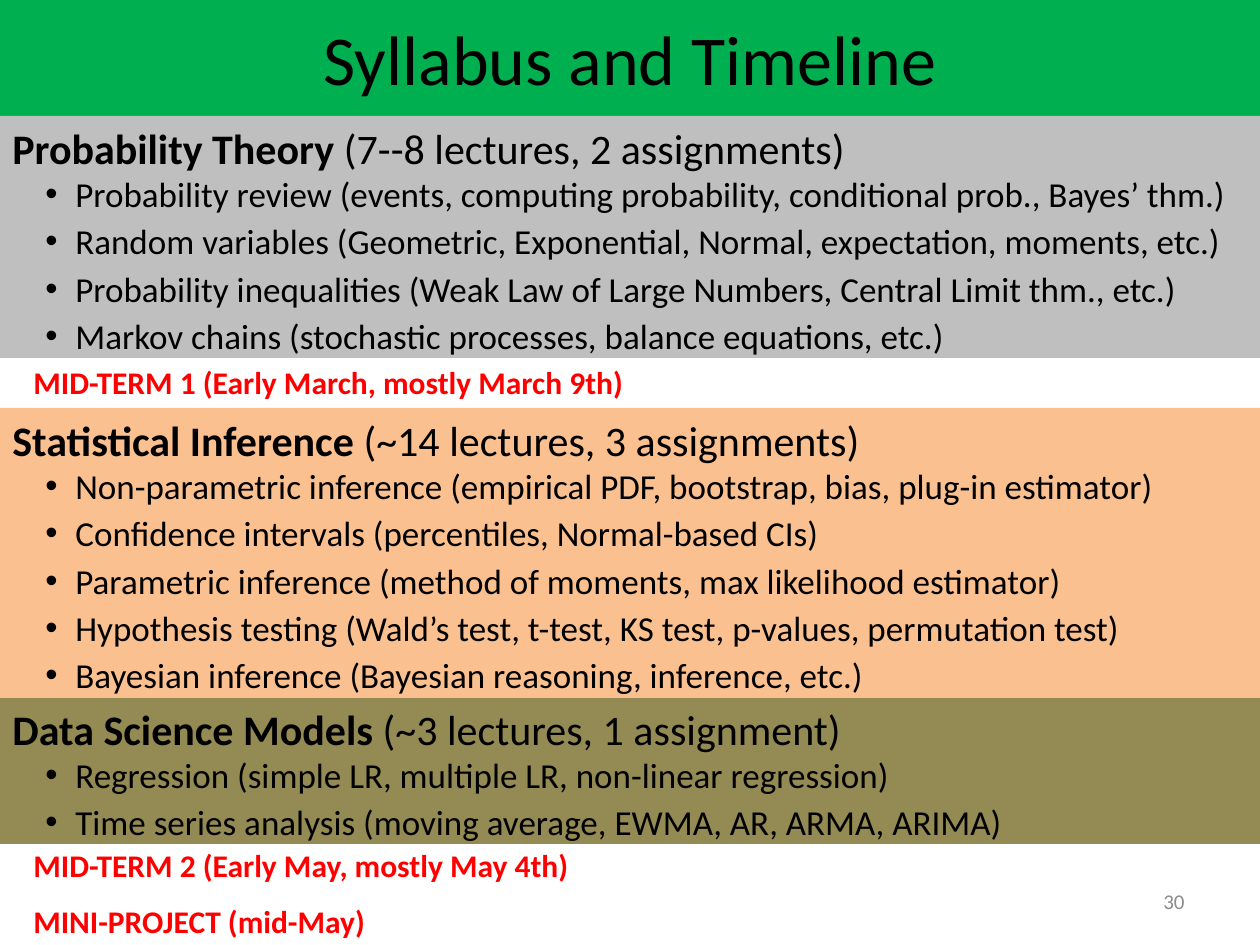
from dataclasses import dataclass

from lxml.etree import SubElement
from pptx import Presentation
from pptx.dml.color import RGBColor as Rgb
from pptx.enum.shapes import MSO_SHAPE as Shape
from pptx.enum.text import MSO_ANCHOR as Anchor, MSO_AUTO_SIZE as AutoSize, PP_ALIGN as Align
from pptx.oxml.ns import qn
from pptx.util import Emu, Pt


@dataclass(frozen=True)
class Theme:
    font: str = "Calibri"
    ink: str = "000000"
    banner: str = "00B050"
    probability: str = "BFBFBF"
    inference: str = "FAC090"
    models: str = "948A54"
    exam: str = "FF0000"
    number: str = "8C8C8C"
    title_size: int = 40
    heading_size: int = 24
    topic_size: int = 20
    exam_size: int = 18
    number_size: int = 12


theme = Theme()


def px(*lengths):
    return [Emu(round(length * 914400 / 126)) for length in lengths]


def style(font, size, color, bold=False):
    font.name = theme.font
    font.size = Pt(size)
    font.bold = bold
    font.color.rgb = Rgb.from_string(color)


deck = Presentation()
deck.slide_width, deck.slide_height = px(1260, 945)
page = deck.slides.add_slide(deck.slide_layouts[5])

title = page.shapes.title
title.left, title.top, title.width, title.height = px(0, 0, 1260, 116)
title.fill.solid()
title.fill.fore_color.rgb = Rgb.from_string(theme.banner)
title.text_frame.text = "Syllabus and Timeline"
title.text_frame.auto_size = AutoSize.NONE
title.text_frame.vertical_anchor = Anchor.MIDDLE
para = title.text_frame.paragraphs[0]
para.alignment = Align.CENTER
style(para.font, theme.title_size, theme.ink)

sections = [
    (697, 147, theme.models, "Data Science Models ", "(~3 lectures, 1 assignment)", [
        "Regression (simple LR, multiple LR, non-linear regression)",
        "Time series analysis (moving average, EWMA, AR, ARMA, ARIMA)",
    ]),
    (408, 290, theme.inference, "Statistical Inference", " (~14 lectures, 3 assignments)", [
        "Non-parametric inference (empirical PDF, bootstrap, bias, plug-in estimator)",
        "Confidence intervals (percentiles, Normal-based CIs)",
        "Parametric inference (method of moments, max likelihood estimator)",
        "Hypothesis testing (Wald’s test, t-test, KS test, p-values, permutation test)",
        "Bayesian inference (Bayesian reasoning, inference, etc.)",
    ]),
    (116, 242, theme.probability, "Probability Theory ", "(7--8 lectures, 2 assignments)", [
        "Probability review (events, computing probability, conditional prob., Bayes’ thm.)",
        "Random variables (Geometric, Exponential, Normal, expectation, moments, etc.)",
        "Probability inequalities (Weak Law of Large Numbers, Central Limit thm., etc.)",
        "Markov chains (stochastic processes, balance equations, etc.)",
    ]),
]
indent, hanging = px(63, -30)
for top, height, color, name, workload, topics in sections:
    band = page.shapes.add_shape(Shape.RECTANGLE, *px(0, top, 1260, height))
    band.shadow.inherit = False
    band.fill.solid()
    band.fill.fore_color.rgb = Rgb.from_string(color)
    band.line.fill.background()
    frame = band.text_frame
    frame.word_wrap = True
    frame.vertical_anchor = Anchor.TOP
    para = frame.paragraphs[0]
    para.alignment = Align.LEFT
    for text, bold in [(name, True), (workload, False)]:
        span = para.add_run()
        span.text = text
        style(span.font, theme.heading_size, theme.ink, bold)
    for topic in topics:
        para = frame.add_paragraph()
        para.text = topic
        para.level = 1
        para.alignment = Align.LEFT
        para.space_after = Pt(3)
        style(para.font, theme.topic_size, theme.ink)
        props = para._p.get_or_add_pPr()
        props.set("marL", str(indent))
        props.set("indent", str(hanging))
        bullet_font = SubElement(props, qn("a:buFont"))
        bullet_font.set("typeface", "Arial")
        bullet = SubElement(props, qn("a:buChar"))
        bullet.set("char", "•")
        props.append(props.find(qn("a:defRPr")))

labels = [
    (21, 357, 788, "MID-TERM 1 (Early March, mostly March 9th)",
     theme.exam_size, theme.exam, True, Align.LEFT, Anchor.TOP),
    (21, 840, 662, "MID-TERM 2 (Early May, mostly May 4th)",
     theme.exam_size, theme.exam, True, Align.LEFT, Anchor.TOP),
    (21, 896, 557, "MINI-PROJECT (mid-May)",
     theme.exam_size, theme.exam, True, Align.LEFT, Anchor.TOP),
    (903, 876, 294, "30",
     theme.number_size, theme.number, False, Align.RIGHT, Anchor.MIDDLE),
]
for left, top, width, text, size, color, bold, alignment, anchor in labels:
    box = page.shapes.add_textbox(*px(left, top, width, 50))
    frame = box.text_frame
    frame.word_wrap = True
    frame.vertical_anchor = anchor
    para = frame.paragraphs[0]
    para.text = text
    para.alignment = alignment
    style(para.font, size, color, bold)

deck.save("out.pptx")
